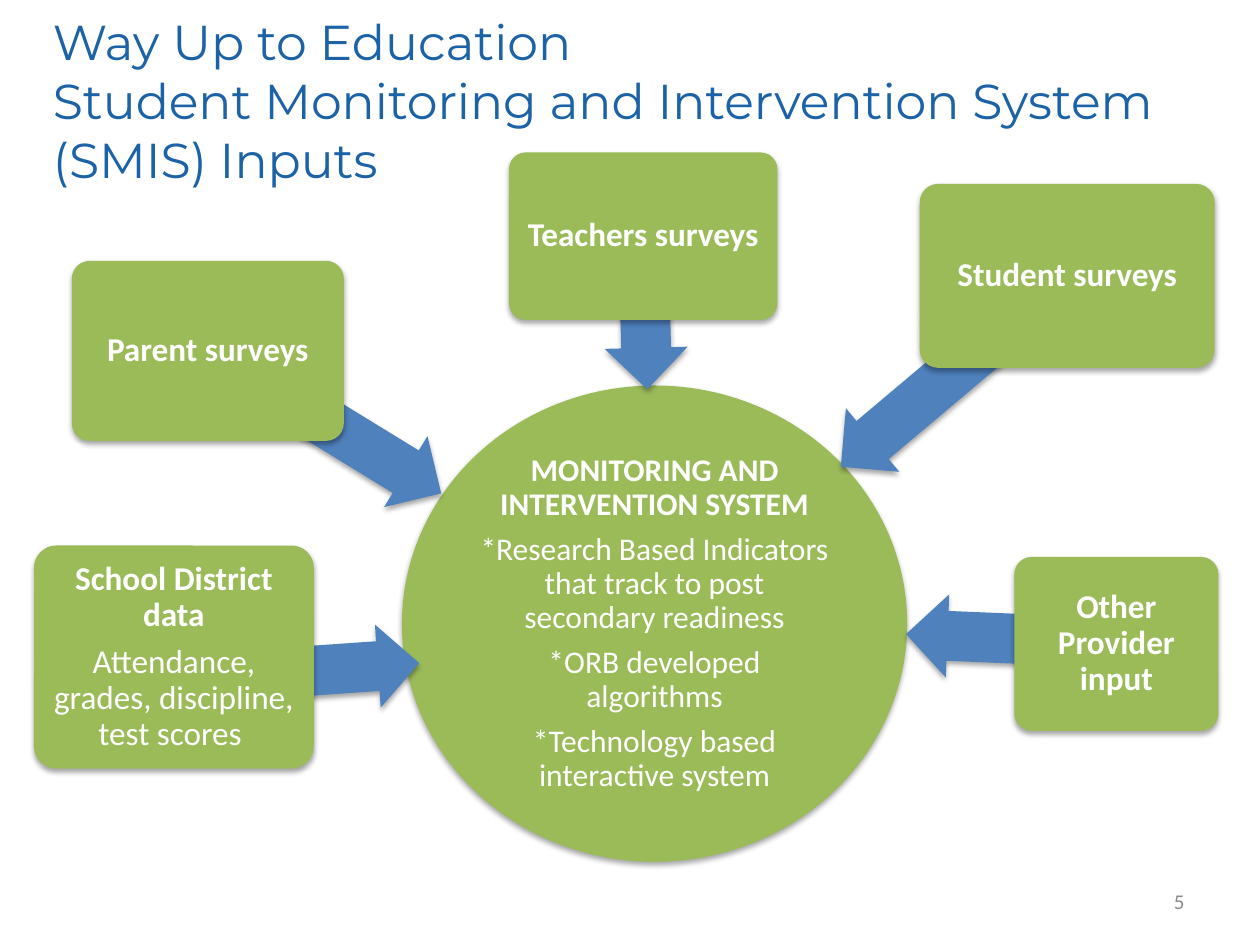
from dataclasses import dataclass

from lxml.etree import SubElement
from pptx import Presentation
from pptx.dml.color import RGBColor
from pptx.enum.shapes import MSO_SHAPE
from pptx.enum.text import MSO_ANCHOR, PP_ALIGN
from pptx.oxml.ns import qn
from pptx.shapes.autoshape import Shape
from pptx.slide import Slide
from pptx.util import Inches, Pt

TITLE_BLUE = RGBColor(0x1B, 0x62, 0xA6)
GREEN = RGBColor(0x9B, 0xBB, 0x59)
ARROW_BLUE = RGBColor(0x4F, 0x81, 0xBD)
WHITE = RGBColor(0xFF, 0xFF, 0xFF)
GRAY = RGBColor(0x89, 0x89, 0x89)


@dataclass(frozen=True)
class Area:
    left: float
    top: float
    width: float
    height: float

    def lengths(self) -> list[Inches]:
        return [Inches(side) for side in (self.left, self.top, self.width, self.height)]


@dataclass(frozen=True)
class Source:
    heading: str
    area: Area
    arrow: Area
    rotation: float
    details: tuple[str, ...] = ()


SOURCES = (
    Source("School District data", Area(0.27, 4.33, 2.22, 1.77),
           Area(1.42, 5, 1.91, 0.66), 176,
           ("Attendance, grades, discipline, test scores ",)),
    Source("Parent surveys", Area(0.57, 2.07, 2.16, 1.43),
           Area(1.39, 2.99, 2.28, 0.66), 211.5),
    Source("Teachers surveys", Area(4.04, 1.21, 2.13, 1.33),
           Area(4.47, 2.11, 1.3, 0.66), 268.5),
    Source("Student surveys", Area(7.3, 1.46, 2.34, 1.46),
           Area(6.38, 2.57, 2.5, 0.66), 319.9),
    Source("Other Provider input", Area(8.05, 4.42, 1.62, 1.38),
           Area(7.19, 4.74, 1.76, 0.66), 2.4),
)
SYSTEM_HEADING = "MONITORING AND INTERVENTION SYSTEM"
SYSTEM_FEATURES = (
    "*Research Based Indicators that track to post secondary readiness",
    "*ORB developed algorithms",
    "*Technology based interactive system",
)


def add_shadow(shape: Shape) -> None:
    shape.shadow.inherit = False
    effects = shape._element.spPr.find(qn("a:effectLst"))
    shadow = SubElement(effects, qn("a:outerShdw"), blurRad=str(Pt(3.1)),
                        dist=str(Pt(1.8)), dir="5400000", rotWithShape="0")
    color = SubElement(shadow, qn("a:srgbClr"), val="000000")
    SubElement(color, qn("a:alpha"), val="35000")


def add_solid(page: Slide, kind: MSO_SHAPE, area: Area, color: RGBColor) -> Shape:
    shape = page.shapes.add_shape(kind, *area.lengths())
    shape.fill.solid()
    shape.fill.fore_color.rgb = color
    shape.line.fill.background()
    add_shadow(shape)
    return shape


def write_text(box: Shape, texts: tuple[str, ...], *, size: float, color: RGBColor,
               font: str = "Calibri", align: PP_ALIGN = PP_ALIGN.LEFT,
               margin: float = 0, bold_first: bool = False,
               line_spacing: float = 1.0, space_after: float = 0) -> None:
    frame = box.text_frame
    frame.word_wrap = True
    frame.vertical_anchor = MSO_ANCHOR.MIDDLE
    frame.margin_left = frame.margin_right = Inches(margin)
    frame.margin_top = frame.margin_bottom = Inches(margin)
    for index, text in enumerate(texts):
        para = frame.add_paragraph() if index else frame.paragraphs[0]
        para.text = text
        para.alignment = align
        para.line_spacing = line_spacing
        para.space_after = Pt(space_after)
        for span in para.runs:
            span.font.name = font
            span.font.size = Pt(size)
            span.font.bold = bold_first and index == 0
            span.font.color.rgb = color


def write_label(shape: Shape, heading: str, details: tuple[str, ...],
                size: float, margin: float) -> None:
    write_text(shape, (heading, *details), size=size, color=WHITE, margin=margin,
               align=PP_ALIGN.CENTER, bold_first=True, line_spacing=0.9,
               space_after=round(size * 0.35, 1))


def add_system(page: Slide) -> None:
    circle = add_solid(page, MSO_SHAPE.OVAL, Area(3.19, 3.06, 4.01, 3.78), GREEN)
    write_label(circle, SYSTEM_HEADING, SYSTEM_FEATURES, size=18, margin=0.01)


def add_source(page: Slide, source: Source) -> None:
    arrow = add_solid(page, MSO_SHAPE.LEFT_ARROW, source.arrow, ARROW_BLUE)
    arrow.adjustments[0] = 0.6
    arrow.adjustments[1] = 0.5
    arrow.rotation = source.rotation
    box = add_solid(page, MSO_SHAPE.ROUNDED_RECTANGLE, source.area, GREEN)
    box.adjustments[0] = 0.1
    write_label(box, source.heading, source.details, size=19, margin=0.04)


def main() -> None:
    deck = Presentation()
    deck.slide_width = Inches(10)
    deck.slide_height = Inches(7.5)
    page = deck.slides.add_slide(deck.slide_layouts[6])

    title = page.shapes.add_textbox(*Area(0.42, 0.17, 9.92, 1.25).lengths())
    write_text(title, ("Way Up to Education\vStudent Monitoring and Intervention System"
                       "\v(SMIS) Inputs",),
               size=28, color=TITLE_BLUE, font="Montserrat")
    add_system(page)
    for source in SOURCES:
        add_source(page, source)
    number = page.shapes.add_textbox(*Area(7.17, 6.95, 2.33, 0.4).lengths())
    write_text(number, ("5",), size=12, color=GRAY, align=PP_ALIGN.RIGHT, margin=0.1)

    deck.save("out.pptx")


if __name__ == "__main__":
    main()
